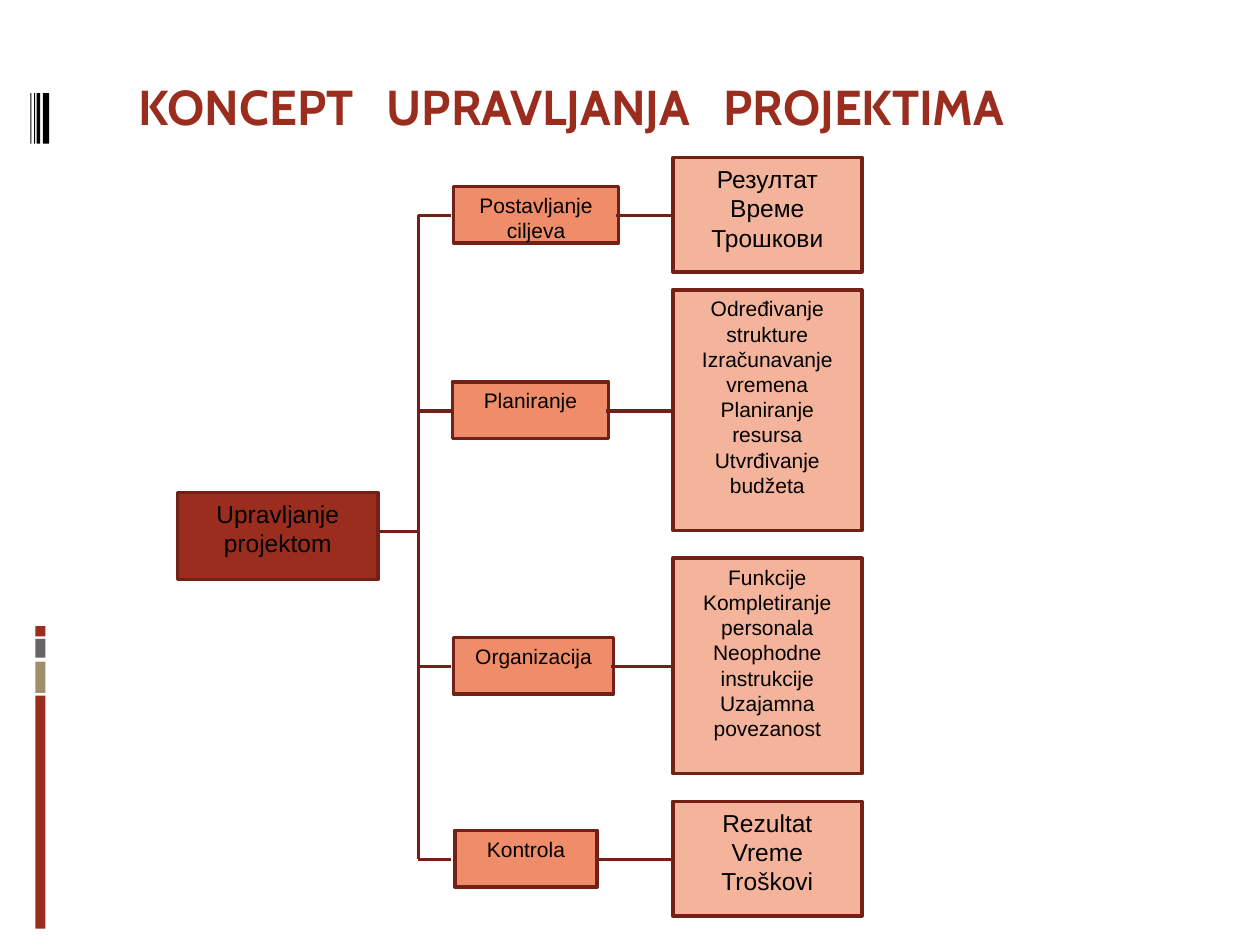
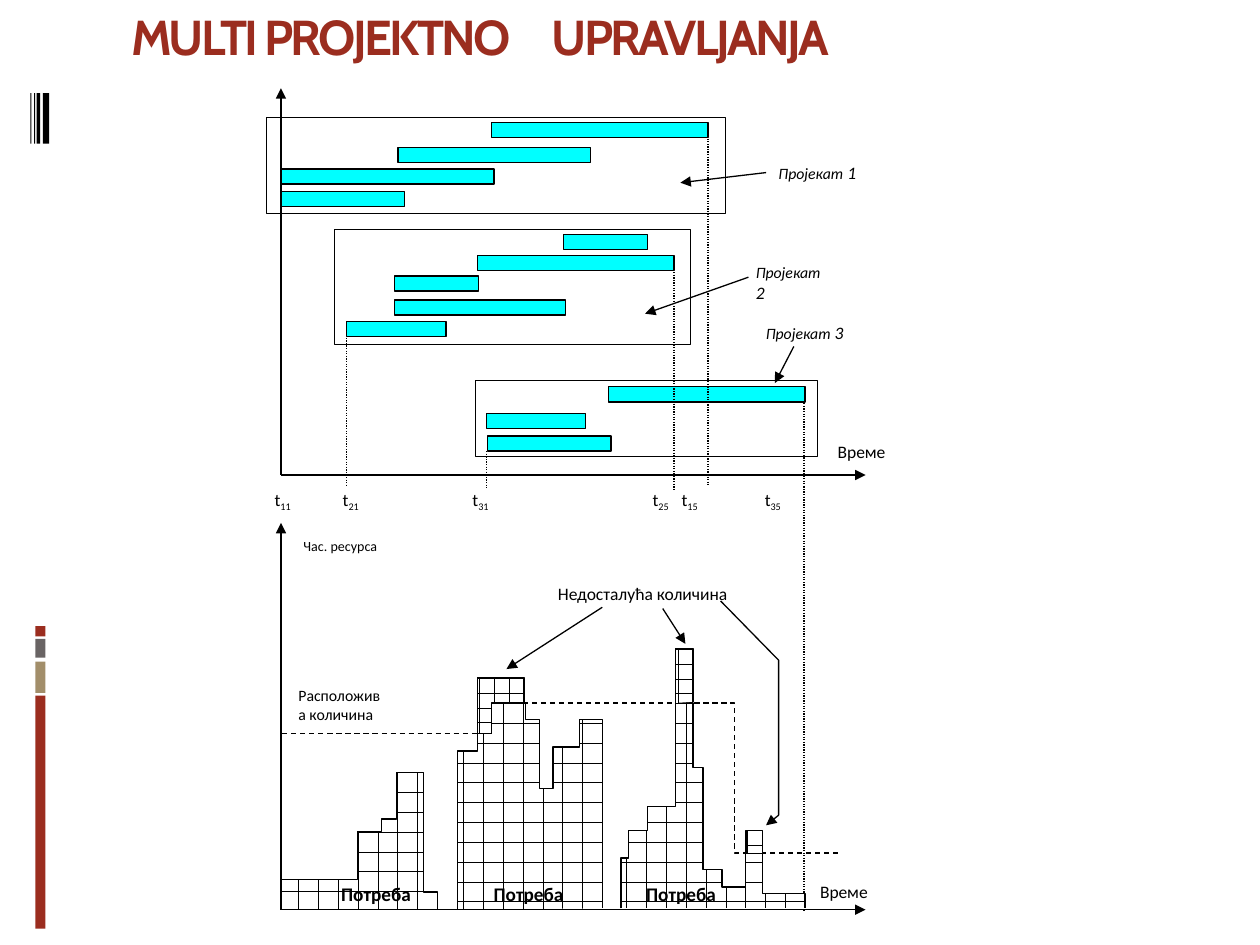
from dataclasses import dataclass
from typing import Any

from lxml import etree
from pptx import Presentation
from pptx.dml.color import RGBColor
from pptx.enum.dml import MSO_LINE, MSO_PATTERN
from pptx.enum.shapes import MSO_CONNECTOR, MSO_SHAPE
from pptx.enum.text import MSO_ANCHOR, MSO_AUTO_SIZE, PP_ALIGN
from pptx.oxml.ns import qn
from pptx.util import Pt

PX = 9144
RECT = MSO_SHAPE.RECTANGLE
STRAIGHT = MSO_CONNECTOR.STRAIGHT
DOT, DASH = MSO_LINE.ROUND_DOT, MSO_LINE.DASH
GRID, BRICK = MSO_PATTERN.DOTTED_GRID, MSO_PATTERN.HORIZONTAL_BRICK
TOP, FIXED = MSO_ANCHOR.TOP, MSO_AUTO_SIZE.NONE
LEFT, CENTER = PP_ALIGN.LEFT, PP_ALIGN.CENTER

BLACK = RGBColor(0x00, 0x00, 0x00)
WHITE = RGBColor(0xFF, 0xFF, 0xFF)
RED = RGBColor(0x9B, 0x2D, 0x1F)
MAROON = RGBColor(0x73, 0x21, 0x17)
CORAL = RGBColor(0xEF, 0x8C, 0x6A)
PEACH = RGBColor(0xF4, 0xB3, 0x9B)
SAND = RGBColor(0xA2, 0x8E, 0x6A)
GRAY = RGBColor(0x69, 0x64, 0x64)
CYAN = RGBColor(0x00, 0xFF, 0xFF)


def say(para, text, size, font="Calibri", color=BLACK, bold=False, italic=False):
    """Add one formatted run and return it."""
    run = para.add_run()
    run.text = text
    face = run.font
    face.name, face.size, face.bold, face.italic = font, Pt(size), bold, italic
    face.color.rgb = color
    return run


def tabs(para, stops):
    """Set left tab stops, given in px."""
    group = etree.SubElement(para._p.get_or_add_pPr(), qn("a:tabLst"))
    for stop in stops:
        etree.SubElement(group, qn("a:tab"), pos=str(stop * PX), algn="l")


def pad(frame, left=10):
    """Give a text frame top anchoring, wrapping and standard insets."""
    frame.word_wrap, frame.auto_size = True, FIXED
    frame.vertical_anchor = TOP
    frame.margin_left, frame.margin_right = left * PX, 10 * PX
    frame.margin_top = frame.margin_bottom = 5 * PX


def ink(shape, color, width, dash=None, arrow=False):
    """Format a line or outline, with an optional arrowhead at its end."""
    shape.line.color.rgb = color
    shape.line.width = Pt(width)
    if dash:
        shape.line.dash_style = dash
    if arrow:
        line = shape._element.spPr.find(qn("a:ln"))
        etree.SubElement(line, qn("a:tailEnd"), type="triangle")


@dataclass
class Area:
    """A region of a slide whose parts are placed from its corner."""

    slide: Any
    x: int
    y: int

    def spot(self, x, y):
        """Turn a place in the region into EMU."""
        return (self.x + x) * PX, (self.y + y) * PX

    def rect(self, x, y, w, h, fill=None, line=None, width=0.75):
        """Draw a rectangle."""
        shape = self.slide.shapes.add_shape(RECT, *self.spot(x, y), w * PX, h * PX)
        shape.shadow.inherit = False
        if fill is None:
            shape.fill.background()
        else:
            shape.fill.solid()
            shape.fill.fore_color.rgb = fill
        if line is None:
            shape.line.fill.background()
        else:
            ink(shape, line, width)
        return shape

    def line(self, start, end, color=BLACK, width=0.75, dash=None, arrow=False):
        """Draw a straight connector."""
        link = self.slide.shapes.add_connector(STRAIGHT, *self.spot(*start), *self.spot(*end))
        ink(link, color, width, dash, arrow)
        etree.SubElement(link._element.spPr, qn("a:effectLst"))

    def trace(self, points, fill=None, close=False, dash=None, arrow=False):
        """Draw a freeform, filled with a pattern or left open."""
        pen = self.slide.shapes.build_freeform(*points[0], scale=PX)
        pen.add_line_segments(points[1:], close=close)
        shape = pen.convert_to_shape(*self.spot(0, 0))
        shape.shadow.inherit = False
        if fill is None:
            shape.fill.background()
        else:
            shape.fill.patterned()
            shape.fill.pattern = fill
            shape.fill.fore_color.rgb = BLACK
            shape.fill.back_color.rgb = WHITE
        ink(shape, BLACK, 0.75, dash, arrow)

    def stairs(self, x, y, *moves, **style):
        """Trace steps whose moves are a new y and a new x in turn."""
        points = [(x, y)]
        for i, move in enumerate(moves):
            x, y = (move, y) if i % 2 else (x, move)
            points.append((x, y))
        self.trace(points, **style)

    def note(self, x, y, w, h, *parts, align=LEFT, left=10, **style):
        """Add a text box of (text, size) runs and return its paragraph."""
        box = self.slide.shapes.add_textbox(*self.spot(x, y), w * PX, h * PX)
        pad(box.text_frame, left)
        para = box.text_frame.paragraphs[0]
        para.alignment = align
        for text, size in parts:
            say(para, text, size, **style)
        return para

    def axes(self, wide, high):
        """Draw two arrows from the lower left corner."""
        for end in ((wide, high), (0, 0)):
            self.line((0, high), end, arrow=True)


def rail(area):
    """Draw the coloured band and the black stripes at the left edge."""
    for y, h, color in ((478, 185, RED), (451, 25, SAND), (433, 15, GRAY), (423, 8, RED)):
        area.rect(4, y, 8, h, color)
    for x, w in ((10, 5), (5, 3), (3, 1), (0, 1)):
        area.rect(x, 0, w, 40, BLACK)


def page(deck, x, y, words, stops, tight=0):
    """Add a slide with the shared rail and a title."""
    slide = deck.slides.add_slide(deck.slide_layouts[5])
    rail(Area(slide, 24, 74))
    title = slide.shapes.title
    title.left, title.top, title.width, title.height = x * PX, y * PX, 850 * PX, 100 * PX
    pad(title.text_frame)
    para = title.text_frame.paragraphs[0]
    para.alignment = LEFT
    tabs(para, stops)
    for i, word in enumerate(words):
        run = say(para, "\t" * (i > 0) + word, 28, "Cabin", RED, True)
        if tight:
            run._r.get_or_add_rPr().set("spc", str(tight))
    return slide


def tree(area):
    """Draw the project management tree."""

    def node(x, y, w, h, fill, size, rows):
        frame = area.rect(x, y, w, h, fill, MAROON, 2).text_frame
        pad(frame)
        for i, row in enumerate(rows):
            para = frame.add_paragraph() if i else frame.paragraphs[0]
            para.alignment = CENTER
            say(para, row, size, "Arial")

    def link(start, end):
        area.line(start, end, MAROON, 2)

    node(0, 266, 159, 69, RED, 14, ["Upravljanje projektom"])
    branches = (
        (219, 23, 131, ["Postavljanje", "ciljeva"], 0, 91, 14, ["Резултат", "Време", "Трошкови"]),
        (218, 178, 124, ["Planiranje"], 105, 191, 12,
         ["Određivanje strukture", "Izračunavanje vremena", "Planiranje resursa",
          "Utvrđivanje budžeta"]),
        (219, 381, 127, ["Organizacija"], 318, 171, 12,
         ["Funkcije", "Kompletiranje personala", "Neophodne instrukcije",
          "Uzajamna povezanost"]),
        (220, 534, 113, ["Kontrola"], 511, 91, 14, ["Rezultat", "Vreme", "Troškovi"]),
    )
    for x, y, w, step, top, h, size, items in branches:
        mid = y + 23
        node(x, y, w, 45, CORAL, 12, step)
        node(393, top, 150, h, PEACH, size, items)
        link((x + w - 2, mid), (393, mid))
        link((217, mid), (191, mid))
    link((191, 46), (191, 557))
    link((159, 297), (191, 297))


def plan(area):
    """Draw the bars of three projects over a time axis."""
    area.axes(464, 307)
    projects = (
        ((-12, 23, 365, 76), ((0, 82, 98), (0, 64, 169), (93, 47, 153), (167, 27, 172)),
         (385, 54, 82), "1", (385, 67), (317, 75)),
        ((42, 112, 283, 91),
         ((52, 185, 79), (90, 168, 136), (90, 149, 67), (156, 133, 156), (224, 116, 67)),
         (367, 132, 80), "2", (371, 150), (289, 179)),
        ((154, 232, 272, 60), ((164, 276, 98), (163, 258, 79), (260, 237, 156)),
         (375, 181, 83), "3", (407, 205), (392, 234)),
    )
    for frame, bars, place, number, start, end in projects:
        for x, y, w in bars:
            area.rect(x, y, w, 12, CYAN, BLACK)
        area.rect(*frame, line=BLACK, width=0.25)
        area.note(*place, 22, ("Пројекат", 9), (" " + number, 10), italic=True)
        area.line(start, end, arrow=True)
    for x, top, end in ((52, 196, 316), (163, 288, 317), (312, 146, 319),
                        (339, 40, 315), (415, 250, 316)):
        area.line((x, top), (x, end), dash=DOT)
    area.note(432, 275, 61, 22, ("Време", 10))
    para = area.note(-5, 313, 446, 26, left=0)
    tabs(para, (54, 157, 300, 323, 389))
    for i, mark in enumerate(("11", "21", "31", "25", "15", "35")):
        say(para, "\t" * (i > 0) + "t", 10)
        say(para, mark, 10)._r.get_or_add_rPr().set("baseline", "-25000")


def load(area):
    """Draw the resource demand against the available amount."""
    area.stairs(0, 307, 283, 61, 245, 80, 235, 92, 198, 113, 293, 124, 307,
                fill=GRID, close=True)
    area.stairs(140, 307, 181, 156, 167, 167, 143, 194, 156, 205, 211, 216, 178, 237,
                156, 255, 306, fill=GRID)
    area.line((415, -29), (415, 308), dash=DOT)
    area.stairs(1, 167, 167, 167, 143, 360, 262, 444, dash=DASH)
    area.stairs(156, 167, 123, 193, 143, 167, 167, fill=BRICK, close=True)
    area.stairs(270, 306, 266, 276, 244, 291, 225, 313, 143, 327, 194, 335, 275, 350,
                289, 369, 262, 382, 294, 416, 306, fill=GRID)
    area.stairs(313, 143, 100, 327, 142, fill=BRICK)
    area.stairs(369, 262, 244, 382, 262, fill=BRICK)
    area.axes(464, 307)
    area.note(418, 279, 61, 22, ("Време", 10))
    area.note(4, 124, 86, 45, ("Расположива количина", 9))
    area.note(8, 7, 86, 25, ("Час. ресурса", 8))
    area.note(200, 43, 174, 25, ("Недосталућа количина", 10), align=CENTER)
    area.line((255, 67), (179, 116), arrow=True)
    area.line((303, 68), (321, 96), arrow=True)
    area.trace([(349, 62), (395, 109), (395, 232), (385, 240)], arrow=True)
    for x in (34, 155, 276):
        area.note(x, 280, 83, 32, ("Потреба", 11), align=CENTER, bold=True)


def main():
    """Build both slides and save them."""
    deck = Presentation()
    deck.slide_width, deck.slide_height = 1000 * PX, 750 * PX
    concept = page(deck, 100, 56, ("KONCEPT", "UPRAVLJANJA", "PROJEKTIMA"), (197, 464))
    tree(Area(concept, 141, 125))
    multi = page(deck, 94, 0, ("MULTI PROJEKTNO", "UPRAVLJANJA"), (334,), -150)
    plan(Area(multi, 223, 70))
    load(Area(multi, 223, 415))
    deck.save("out.pptx")


if __name__ == "__main__":
    main()
